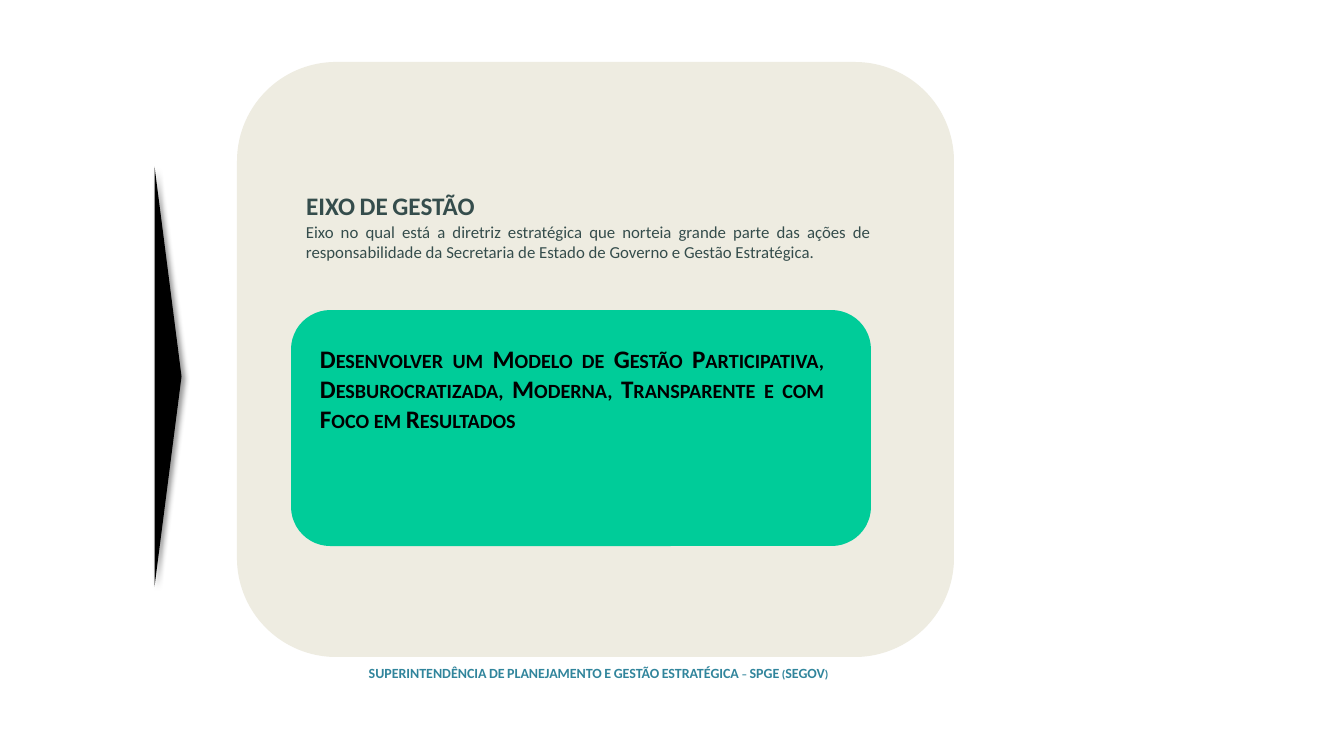
from lxml.etree import SubElement
from pptx import Presentation
from pptx.dml.color import RGBColor
from pptx.enum.shapes import MSO_SHAPE
from pptx.enum.text import MSO_ANCHOR, MSO_AUTO_SIZE, PP_ALIGN
from pptx.oxml.ns import qn
from pptx.util import Emu, Pt

PIXEL = 914400 / 100.8
SLATE = "354D4C"
HEADING = {"size": Pt(18), "bold": True}


def px(length):
    return Emu(round(length * PIXEL))


def color(value):
    return RGBColor.from_string(value)


def add_block(page, kind, place, fill):
    block = page.shapes.add_shape(kind, *map(px, place))
    block.shadow.inherit = False
    block.fill.solid()
    block.fill.fore_color.rgb = color(fill)
    block.line.fill.background()
    return block


def add_shadow(block, blur, distance, degrees, opacity):
    effects = block.element.spPr.find(qn("a:effectLst"))
    shadow = SubElement(effects, qn("a:outerShdw"), blurRad=str(Pt(blur)),
                        dist=str(Pt(distance)), dir=str(degrees * 60000), rotWithShape="0")
    tint = SubElement(shadow, qn("a:srgbClr"), val="000000")
    SubElement(tint, qn("a:alpha"), val=str(opacity * 1000))


def write_text(box, text, tone, formats, align, small_caps=True):
    frame = box.text_frame
    frame.word_wrap = True
    frame.auto_size = MSO_AUTO_SIZE.SHAPE_TO_FIT_TEXT
    frame.vertical_anchor = MSO_ANCHOR.TOP
    para = frame.paragraphs[0]
    para.alignment = align
    span = para.add_run()
    span.text = text
    span.font.name = "Calibri"
    for name, value in formats.items():
        setattr(span.font, name, value)
    span.font.color.rgb = color(tone)
    if small_caps:
        span.font._element.set("cap", "small")


def add_text(page, place, *content, **options):
    box = page.shapes.add_textbox(*map(px, place))
    write_text(box, *content, **options)


def place_title(page, place, *content):
    title = page.shapes.title
    title.left, title.top, title.width, title.height = map(px, place)
    write_text(title, *content)
    title.element.getparent().append(title.element)


def main():
    deck = Presentation()
    deck.slide_width, deck.slide_height = px(1344), px(756)
    page = deck.slides.add_slide(deck.slide_layouts[5])

    add_block(page, MSO_SHAPE.ROUNDED_RECTANGLE, (237, 62, 717, 595), "EEECE1")
    add_block(page, MSO_SHAPE.ROUNDED_RECTANGLE, (291, 310, 580, 236), "00CC99")
    add_text(page, (310, 338, 524, 102),
             "Desenvolver um Modelo de Gestão Participativa, Desburocratizada, "
             "Moderna, Transparente e com Foco em Resultados",
             "000000", HEADING, PP_ALIGN.JUSTIFY)
    place_title(page, (296, 185, 493, 40), "EIXO DE GESTÃO", SLATE, HEADING, PP_ALIGN.LEFT)
    add_text(page, (296, 217, 585, 50),
             "Eixo no qual está a diretriz estratégica que norteia grande parte das ações "
             "de responsabilidade da Secretaria de Estado de Governo e Gestão Estratégica.",
             SLATE, {"size": Pt(12)}, PP_ALIGN.JUSTIFY, small_caps=False)
    add_text(page, (240, 660, 717, 27),
             "SUPERINTENDÊNCIA DE PLANEJAMENTO E GESTÃO ESTRATÉGICA – SPGE (SEGOV)",
             "31859C", {"size": Pt(10), "bold": True}, PP_ALIGN.CENTER)

    pointer = add_block(page, MSO_SHAPE.ISOSCELES_TRIANGLE, (-42, 363, 420, 27), "000000")
    pointer.rotation = 90
    add_shadow(pointer, 4, 3, 45, 40)

    deck.save("out.pptx")


if __name__ == "__main__":
    main()
